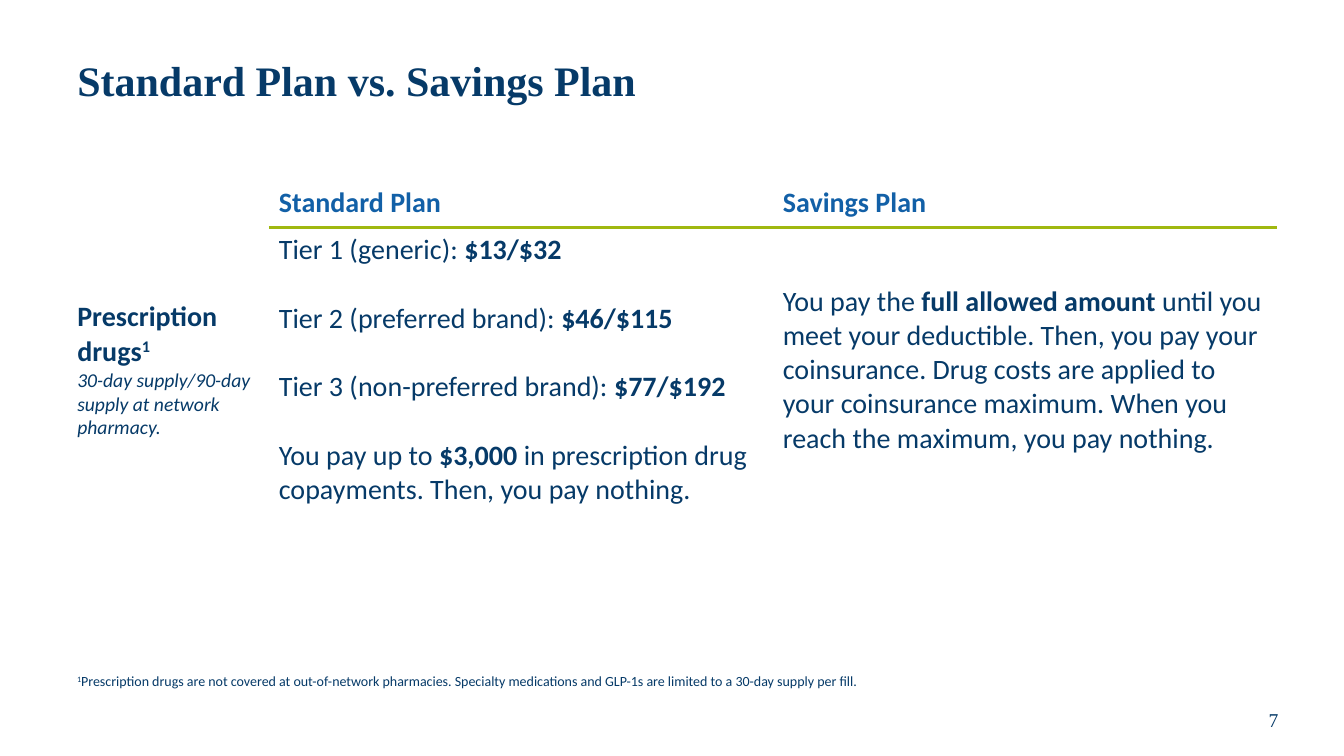
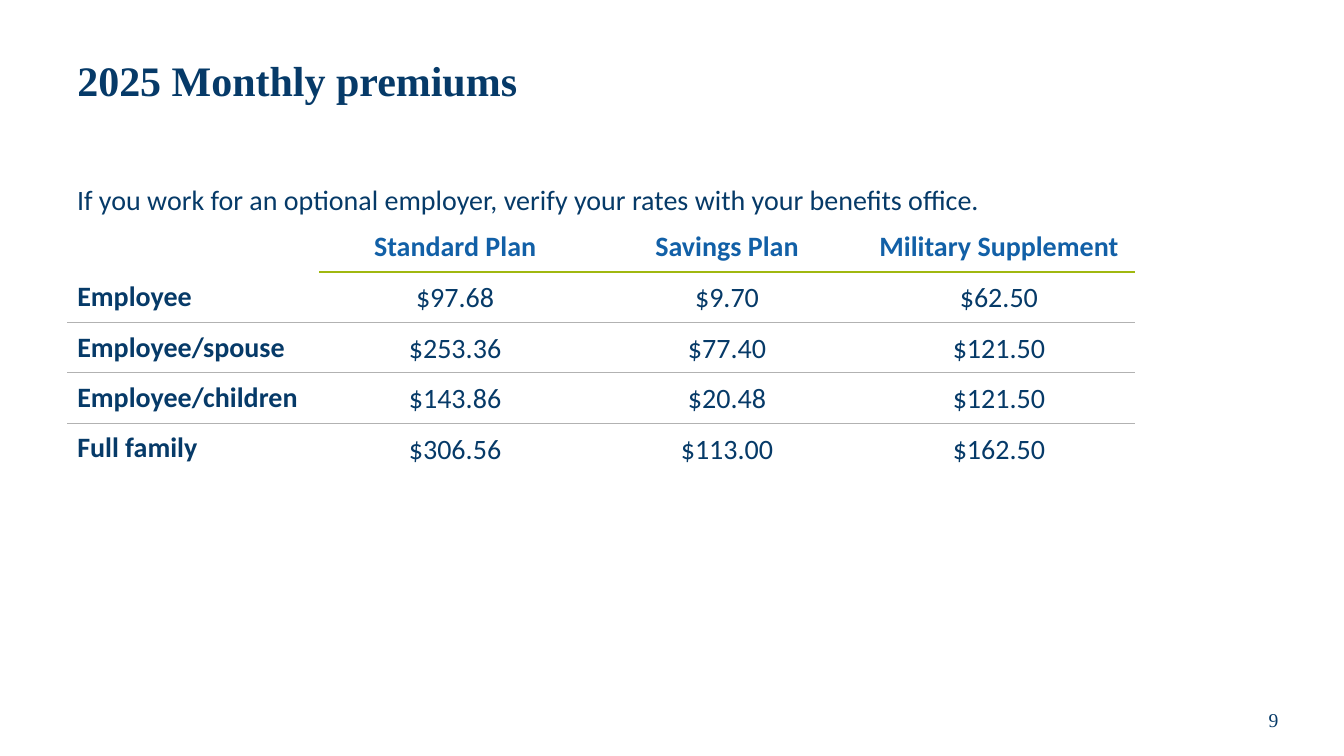
from lxml import etree
from pptx import Presentation
from pptx.dml.color import RGBColor
from pptx.enum.text import MSO_ANCHOR as ANCHOR, MSO_AUTO_SIZE as AUTO, PP_ALIGN as ALIGN
from pptx.oxml import parse_xml
from pptx.oxml.ns import nsdecls, qn
from pptx.util import Pt

PX = 9525
COLORS = {"navy": "063A68", "blue": "1260A7", "green": "A0B810", "gray": "B2B2B2"}
HEAD_FONT, BODY_FONT = "Times New Roman", "Calibri"
LEFT, WIDTH = 64, 1152
TITLE_BOX = (LEFT, 24, WIDTH, 110)
NUMBER_BOX = (1157, 661, 112, 48)
NO_GRID_STYLE = "{2D5ABB26-0587-4C30-8999-92F81FD0307C}"
HEADER_RULE, ROW_RULE = ("green", 2.25), ("gray", 0.5)


def px(*values):
    return [v * PX for v in values]


def write(p, runs, size=20, color="navy", font=BODY_FONT, align=None, spacing=None):
    """Fill a paragraph with (text, flags) runs: b bold, i italic, ^ superscript."""
    if align is not None:
        p.alignment = align
    if spacing:
        p.line_spacing = spacing
    for text, flags in runs:
        r = p.add_run()
        r.text = text
        f = r.font
        f.name, f.size = font, Pt(size)
        f.bold, f.italic = "b" in flags, "i" in flags
        f.color.rgb = RGBColor.from_string(COLORS[color])
        if "^" in flags:
            f._element.set("baseline", "30000")


def add_text(slide, box, runs, anchor=ANCHOR.TOP, **style):
    tf = slide.shapes.add_textbox(*px(*box)).text_frame
    tf.word_wrap = True
    tf.vertical_anchor = anchor
    write(tf.paragraphs[0], runs, **style)


def add_slide(prs, title, number):
    slide = prs.slides.add_slide(prs.slide_layouts[5])
    sp = slide.shapes.title
    sp.left, sp.top, sp.width, sp.height = px(*TITLE_BOX)
    tf = sp.text_frame
    tf.auto_size = AUTO.NONE
    tf.vertical_anchor = ANCHOR.MIDDLE
    write(tf.paragraphs[0], [(title, "b")], 30, font=HEAD_FONT,
          align=ALIGN.LEFT, spacing=0.9)
    add_text(slide, NUMBER_BOX, [(str(number), "")], ANCHOR.MIDDLE,
             size=14, font=HEAD_FONT, align=ALIGN.CENTER)
    return slide


def add_plain_table(slide, left, top, widths, heights):
    frame = slide.shapes.add_table(len(heights), len(widths),
                                   *px(left, top, sum(widths), sum(heights)))
    table = frame.table
    table.horz_banding = False
    table._tbl.tblPr.find(qn("a:tableStyleId")).text = NO_GRID_STYLE
    for col, w in zip(table.columns, widths):
        col.width = w * PX
    for row, h in zip(table.rows, heights):
        row.height = h * PX
    for cell in table.iter_cells():
        cell.fill.background()
        cell.vertical_anchor = ANCHOR.MIDDLE
    return table


def add_border(cell, side, rule):
    color, width = rule
    line = parse_xml(f'<a:{side} {nsdecls("a")} w="{Pt(width)}"/>')
    fill = etree.SubElement(line, qn("a:solidFill"))
    etree.SubElement(fill, qn("a:srgbClr"), val=COLORS[color])
    tc_pr = cell._tc.get_or_add_tcPr()
    tc_pr.insert(len(tc_pr.findall(qn("a:lnT"))), line)


def rule_below(table, row, rule, first_col=0):
    for col in range(first_col, len(table.columns)):
        add_border(table.cell(row, col), "lnB", rule)
        add_border(table.cell(row + 1, col), "lnT", rule)


def fill_header(table, names, align=None):
    for col, name in enumerate(names, 1):
        write(table.cell(0, col).text_frame.paragraphs[0], [(name, "b")],
              color="blue", align=align)
    rule_below(table, 0, HEADER_RULE, first_col=1)


def fill_paragraphs(cell, paragraphs, gap=0):
    tf = cell.text_frame
    for i, runs in enumerate(paragraphs):
        p = tf.add_paragraph() if i else tf.paragraphs[0]
        write(p, runs)
        if gap and i < len(paragraphs) - 1:
            p.space_after = Pt(gap)


def build_comparison(prs):
    slide = add_slide(prs, "Standard Plan vs. Savings Plan", 7)
    table = add_plain_table(slide, LEFT, 169, [192, 480, 480], [48, 271])
    fill_header(table, ["Standard Plan", "Savings Plan"])

    label, standard, savings = table.rows[1].cells
    fill_paragraphs(label, [[("Prescription drugs", "b"), ("1", "b^")]])
    write(label.text_frame.add_paragraph(),
          [("30-day supply/90-day supply at network pharmacy.", "i")], 14)
    fill_paragraphs(standard, [
        [("Tier 1 (generic): ", ""), ("$13/$32", "b")],
        [("Tier 2 (preferred brand): ", ""), ("$46/$115", "b")],
        [("Tier 3 (non-preferred brand): ", ""), ("$77/$192", "b")],
        [("You pay up to ", ""), ("$3,000 ", "b"),
         ("in prescription drug copayments. Then, you pay nothing.", "")],
    ], gap=24.4)
    fill_paragraphs(savings, [[
        ("You pay the ", ""), ("full allowed amount ", "b"),
        ("until you meet your deductible. Then, you pay your coinsurance. "
         "Drug costs are applied to your coinsurance maximum. "
         "When you reach the maximum, you pay nothing.", "")]])

    add_text(slide, (LEFT, 636, WIDTH, 26), [
        ("1", "^"),
        ("Prescription drugs are not covered at out-of-network pharmacies. "
         "Specialty medications and GLP-1s are limited to a 30-day supply per fill.", ""),
    ], size=10)


def build_premiums(prs):
    slide = add_slide(prs, "2025 Monthly premiums", 9)
    add_text(slide, (LEFT, 169, WIDTH, 42), [
        ("If you work for an optional employer, "
         "verify your rates with your benefits office.", "")])

    premiums = [
        ("Employee", "$97.68", "$9.70", "$62.50"),
        ("Employee/spouse", "$253.36", "$77.40", "$121.50"),
        ("Employee/children", "$143.86", "$20.48", "$121.50"),
        ("Full family", "$306.56", "$113.00", "$162.50"),
    ]
    table = add_plain_table(slide, LEFT, 211, [240] + [259] * 3,
                            [48] * (len(premiums) + 1))
    fill_header(table, ["Standard Plan", "Savings Plan", "Military Supplement"],
                ALIGN.CENTER)
    for row, (level, *rates) in enumerate(premiums, 1):
        fill_paragraphs(table.cell(row, 0), [[(level, "b")]])
        for col, rate in enumerate(rates, 1):
            write(table.cell(row, col).text_frame.paragraphs[0], [(rate, "")],
                  align=ALIGN.CENTER, spacing=1.07)
        if row < len(premiums):
            rule_below(table, row, ROW_RULE)


def main():
    prs = Presentation()
    prs.slide_width, prs.slide_height = px(1280, 720)
    build_comparison(prs)
    build_premiums(prs)
    prs.save("out.pptx")


if __name__ == "__main__":
    main()
